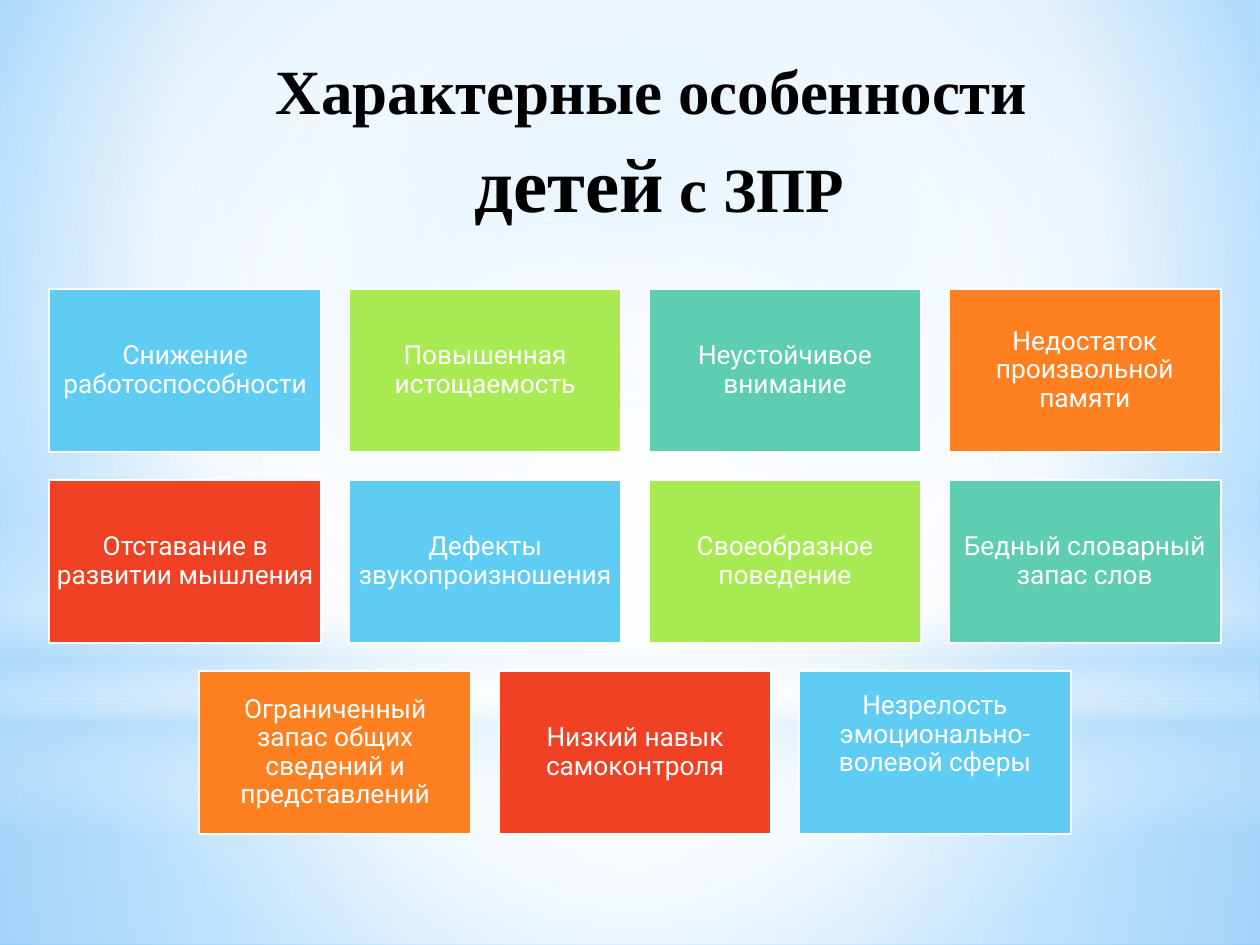
from lxml import etree
from pptx import Presentation
from pptx.dml.color import RGBColor
from pptx.enum.shapes import MSO_SHAPE as Shape
from pptx.enum.text import MSO_ANCHOR as Anchor, PP_ALIGN as Align
from pptx.oxml.ns import qn
from pptx.util import Pt

WHITE = RGBColor(0xFF, 0xFF, 0xFF)
BLACK = RGBColor(0x00, 0x00, 0x00)
SKY = RGBColor(0x5E, 0xCC, 0xF3)
LIME = RGBColor(0xA7, 0xEA, 0x52)
MINT = RGBColor(0x5D, 0xCE, 0xAF)
ORANGE = RGBColor(0xFF, 0x80, 0x21)
RED = RGBColor(0xF1, 0x41, 0x24)
LIGHT_BLUE = RGBColor(0x9E, 0xD5, 0xFF)
DEEP_BLUE = RGBColor(0x5B, 0xB9, 0xFF)
PALE_BLUE = RGBColor(0xB4, 0xDC, 0xFA)

CARD_COLORS = [SKY, LIME, MINT, ORANGE, RED]
CARD_ROWS = [
    ["Снижение работоспособности", "Повышенная истощаемость",
     "Неустойчивое внимание", "Недостаток произвольной памяти"],
    ["Отставание в развитии мышления", "Дефекты звукопроизношения",
     "Своеобразное поведение", "Бедный словарный запас слов"],
    ["Ограниченный запас общих сведений и представлений",
     "Низкий навык самоконтроля", "Незрелость эмоционально-волевой сферы"],
]
CARD_WIDTH, CARD_HEIGHT, CARD_GAP = 155.6, 93.4, 15.75
CARDS_CENTER, CARDS_TOP = 362.9, 165
CARD_INSET, LAST_CARD_LIFT = 4.3, 20.6
CENTER = (50, 50, 50, 50)


def set_gradient(fill, owner, stops, focus=None):
    """Fill with (position, color, opacity) stops: round if focus is given, else downward."""
    fill.gradient()
    gradient = next(owner.iter(qn("a:gradFill")))
    for child in list(gradient):
        gradient.remove(child)
    stop_list = etree.SubElement(gradient, qn("a:gsLst"))
    for position, color, opacity in stops:
        stop = etree.SubElement(stop_list, qn("a:gs"), pos=str(position * 1000))
        tint = etree.SubElement(stop, qn("a:srgbClr"), val=str(color))
        if opacity < 100:
            etree.SubElement(tint, qn("a:alpha"), val=str(opacity * 1000))
    if focus:
        path = etree.SubElement(gradient, qn("a:path"), path="circle")
        sides = {side: str(value * 1000) for side, value in zip("ltrb", focus)}
        etree.SubElement(path, qn("a:fillToRect"), **sides)
    else:
        etree.SubElement(gradient, qn("a:lin"), ang="5400000", scaled="0")


def add_glow(slide, kind, top, height, stops, focus=None):
    """Add a full-width translucent backdrop layer."""
    glow = slide.shapes.add_shape(kind, Pt(0), Pt(top), Pt(720), Pt(height))
    glow.shadow.inherit = False
    glow.line.fill.background()
    set_gradient(glow.fill, glow._element.spPr, stops, focus)


def add_backdrop(slide):
    set_gradient(slide.background.fill, slide._element,
                 [(0, LIGHT_BLUE, 100), (60, WHITE, 100), (100, DEEP_BLUE, 100)],
                 (20, 10, 20, 60))
    add_glow(slide, Shape.RECTANGLE, 401.8, 138.2,
             [(0, WHITE, 91), (37, WHITE, 76), (100, PALE_BLUE, 79)], CENTER)
    add_glow(slide, Shape.RECTANGLE, 0, 401.8,
             [(0, WHITE, 89), (48, WHITE, 62), (100, PALE_BLUE, 79)], CENTER)
    add_glow(slide, Shape.RECTANGLE, 296.6, 180,
             [(0, WHITE, 0), (29, WHITE, 30), (45, PALE_BLUE, 40),
              (55, WHITE, 26), (65, PALE_BLUE, 60), (100, WHITE, 0)])
    add_glow(slide, Shape.OVAL, 126, 401.8,
             [(0, WHITE, 100), (56, WHITE, 0)], CENTER)


def add_run(paragraph, text, font_name, size, color, bold=False):
    run = paragraph.add_run()
    run.text = text
    run.font.name = font_name
    run.font.size = Pt(size)
    run.font.color.rgb = color
    run.font.bold = bold


def add_card(slide, left, top, text, color, lift=0):
    card = slide.shapes.add_shape(Shape.RECTANGLE, Pt(left), Pt(top),
                                  Pt(CARD_WIDTH), Pt(CARD_HEIGHT))
    card.shadow.inherit = False
    card.fill.solid()
    card.fill.fore_color.rgb = color
    card.line.color.rgb = WHITE
    card.line.width = Pt(1.25)
    frame = card.text_frame
    frame.word_wrap = True
    frame.vertical_anchor = Anchor.MIDDLE
    frame.margin_left = frame.margin_right = frame.margin_top = Pt(CARD_INSET)
    frame.margin_bottom = Pt(CARD_INSET + lift)
    paragraph = frame.paragraphs[0]
    paragraph.alignment = Align.CENTER
    paragraph.line_spacing = 0.9
    add_run(paragraph, text, "Roboto", 15, WHITE)


def add_cards(slide):
    """Lay out centered rows, with the colors cycling from card to card."""
    last_text = CARD_ROWS[-1][-1]
    number = 0
    for row, texts in enumerate(CARD_ROWS):
        row_width = len(texts) * (CARD_WIDTH + CARD_GAP) - CARD_GAP
        row_left = CARDS_CENTER - row_width / 2
        top = CARDS_TOP + row * (CARD_HEIGHT + CARD_GAP)
        for column, text in enumerate(texts):
            left = row_left + column * (CARD_WIDTH + CARD_GAP)
            add_card(slide, left, top, text, CARD_COLORS[number % len(CARD_COLORS)],
                     LAST_CARD_LIFT if text == last_text else 0)
            number += 1


def add_title(slide):
    title = slide.shapes.add_textbox(Pt(90), Pt(22.3), Pt(573.8), Pt(104.4))
    frame = title.text_frame
    frame.word_wrap = True
    frame.margin_top = Pt(7.4)
    first_line, second_line = frame.paragraphs[0], frame.add_paragraph()
    first_line.alignment = second_line.alignment = Align.CENTER
    second_line.space_before = Pt(4.4)
    for line, text, size in [(first_line, "Характерные особенности ", 36),
                             (second_line, "детей", 44),
                             (second_line, " с ЗПР", 36)]:
        add_run(line, text, "Times New Roman", size, BLACK, bold=True)


def main():
    deck = Presentation()
    deck.slide_width, deck.slide_height = Pt(720), Pt(540)
    slide = deck.slides.add_slide(deck.slide_layouts[6])
    add_backdrop(slide)
    add_cards(slide)
    add_title(slide)
    deck.save("out.pptx")


if __name__ == "__main__":
    main()
